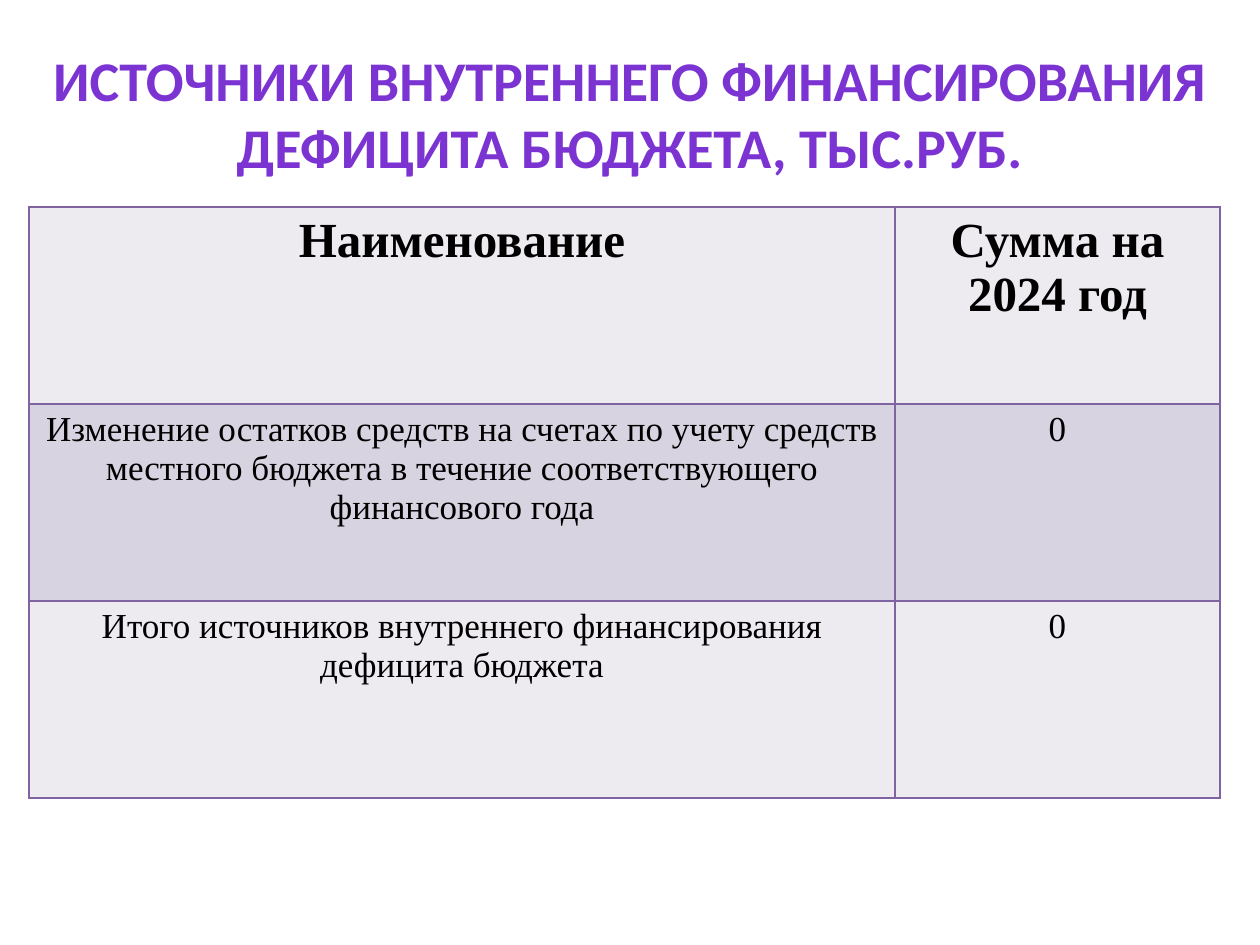
from lxml.etree import SubElement
from pptx import Presentation
from pptx.dml.color import RGBColor
from pptx.enum.text import MSO_ANCHOR, MSO_AUTO_SIZE, PP_ALIGN
from pptx.oxml.ns import qn
from pptx.util import Emu, Pt

PX = 914400 // 126
COLORS = {
    "title": "7B34D2",
    "text": "000000",
    "border": "8064A2",
    "light": "EDEAF0",
    "dark": "D8D3E0",
}
TITLE_LINES = [
    "ИСТОЧНИКИ ВНУТРЕННЕГО ФИНАНСИРОВАНИЯ",
    "ДЕФИЦИТА БЮДЖЕТА, ТЫС.РУБ.",
]
BUDGET_ROWS = [
    ("Наименование", "Сумма на 2024 год"),
    ("Изменение остатков средств на счетах по учету средств местного "
     "бюджета в течение соответствующего финансового года", "0"),
    ("Итого источников внутреннего финансирования дефицита бюджета", "0"),
]


def write_text(paragraph, text, font="Times New Roman", size=20, bold=False,
               color="text"):
    paragraph.alignment = PP_ALIGN.CENTER
    run = paragraph.add_run()
    run.text = text
    run.font.name = font
    run.font.size = Pt(size)
    run.font.bold = bold
    run.font.color.rgb = RGBColor.from_string(COLORS[color])


def fill_cell(cell, color):
    """Set the cell's four borders, then its fill, in schema order."""
    properties = cell._tc.get_or_add_tcPr()
    for side in ("lnL", "lnR", "lnT", "lnB"):
        line = SubElement(properties, qn(f"a:{side}"), w=str(Pt(1)))
        solid = SubElement(line, qn("a:solidFill"))
        SubElement(solid, qn("a:srgbClr"), val=COLORS["border"])
    cell.fill.solid()
    cell.fill.fore_color.rgb = RGBColor.from_string(COLORS[color])


class SlideBuilder:
    """Holds the current slide and places elements on it in px."""

    def __init__(self, presentation):
        self.slide = presentation.slides.add_slide(presentation.slide_layouts[5])

    def title(self, left, top, width, height, lines):
        shape = self.slide.shapes.title
        shape.left, shape.top = Emu(left * PX), Emu(top * PX)
        shape.width, shape.height = Emu(width * PX), Emu(height * PX)
        frame = shape.text_frame
        frame.word_wrap = True
        frame.auto_size = MSO_AUTO_SIZE.NONE
        frame.vertical_anchor = MSO_ANCHOR.TOP
        for index, line in enumerate(lines):
            paragraph = frame.add_paragraph() if index else frame.paragraphs[0]
            write_text(paragraph, line, font="Calibri", size=32, bold=True,
                       color="title")

    def table(self, left, top, column_widths, row_height, rows):
        table = self.slide.shapes.add_table(
            len(rows), len(column_widths), Emu(left * PX), Emu(top * PX),
            Emu(sum(column_widths) * PX), Emu(row_height * len(rows) * PX)).table
        for column, width in zip(table.columns, column_widths):
            column.width = Emu(width * PX)
        for row_index, texts in enumerate(rows):
            header = row_index == 0
            for column_index, text in enumerate(texts):
                cell = table.cell(row_index, column_index)
                fill_cell(cell, "dark" if row_index % 2 else "light")
                write_text(cell.text_frame.paragraphs[0], text,
                           size=28 if header else 20, bold=header)


def main():
    presentation = Presentation()
    presentation.slide_width = Emu(1260 * PX)
    presentation.slide_height = Emu(945 * PX)
    builder = SlideBuilder(presentation)
    builder.title(0, 39, 1260, 149, TITLE_LINES)
    builder.table(29, 207, [866, 325], 197, BUDGET_ROWS)
    presentation.save("out.pptx")


if __name__ == "__main__":
    main()
